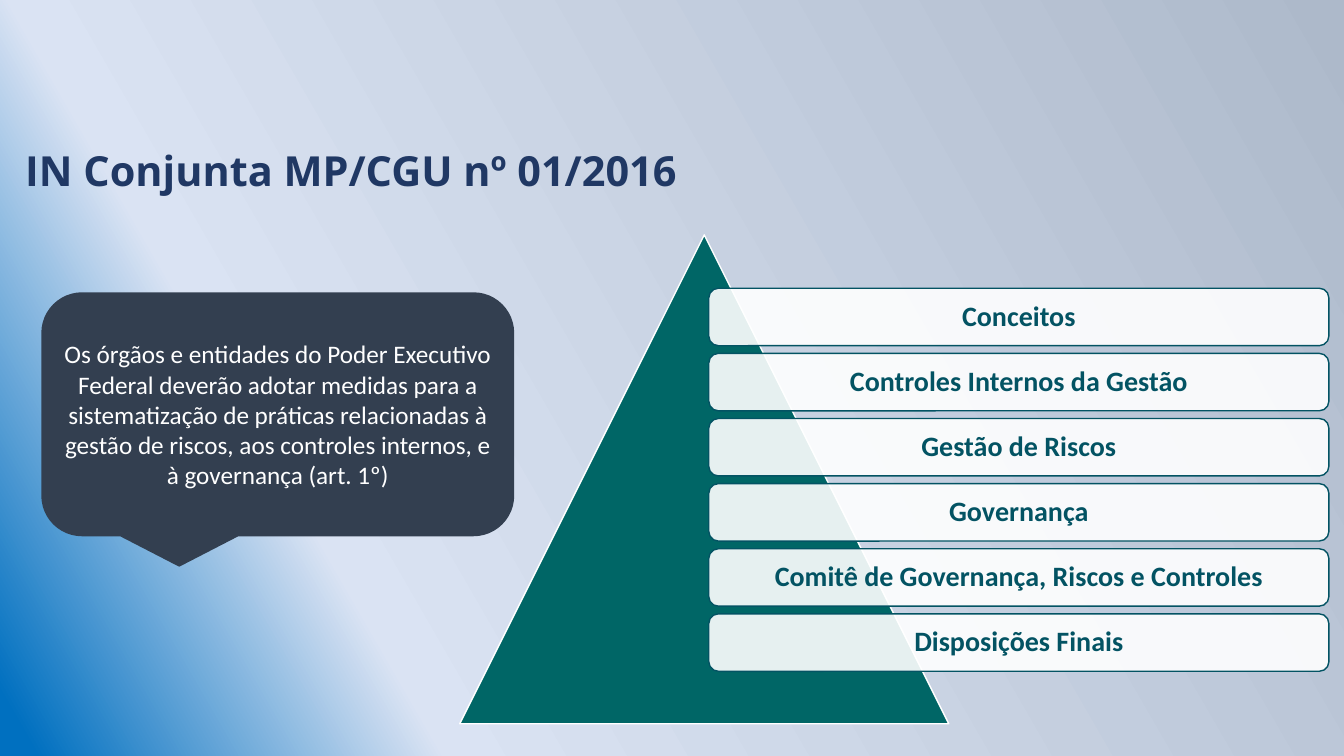
import copy

import pptx
import pptx.dml.color
import pptx.enum.shapes
import pptx.enum.text
import pptx.oxml
import pptx.oxml.ns
import pptx.util

Inches = pptx.util.Inches
Pt = pptx.util.Pt
RGBColor = pptx.dml.color.RGBColor
Shape = pptx.enum.shapes.MSO_SHAPE
Align = pptx.enum.text.PP_ALIGN
Anchor = pptx.enum.text.MSO_ANCHOR
qn = pptx.oxml.ns.qn

NAVY = RGBColor(0x20, 0x38, 0x64)
SLATE = RGBColor(0x33, 0x3F, 0x50)
GREEN = RGBColor(0x00, 0x66, 0x66)
TEAL = RGBColor(0x03, 0x53, 0x63)
WHITE = RGBColor(0xFF, 0xFF, 0xFF)
BACKGROUND_STOPS = [
    (0, RGBColor(0xAD, 0xB9, 0xCA)),
    (0.75, RGBColor(0xDA, 0xE3, 0xF3)),
    (0.98, RGBColor(0x00, 0x70, 0xC0)),
]

ARTICLE = (
    "Os órgãos e entidades do Poder Executivo Federal deverão adotar medidas "
    "para a sistematização de práticas relacionadas à gestão de riscos, aos "
    "controles internos, e à governança (art. 1º)"
)
CHAPTERS = [
    "Conceitos",
    "Controles Internos da Gestão",
    "Gestão de Riscos",
    "Governança",
    "Comitê de Governança, Riscos e Controles",
    "Disposições Finais",
]
FIRST_BAR_TOP = 2.86
LAST_BAR_TOP = 6.09


def paint_background(slide):
    fill = slide.background.fill
    fill.gradient()
    fill.gradient_angle = 210
    stop_list = slide.element.find(".//" + qn("a:gsLst"))
    stop_list.append(copy.deepcopy(stop_list[-1]))
    for stop, (position, color) in zip(fill.gradient_stops, BACKGROUND_STOPS):
        stop.position = position
        stop.color.rgb = color


def write_text(frame, text, font_name, size, color, align, bold=False):
    frame.word_wrap = True
    paragraph = frame.paragraphs[0]
    paragraph.text = text
    paragraph.alignment = align
    font = paragraph.font
    font.name = font_name
    font.size = Pt(size)
    font.bold = bold
    font.color.rgb = color
    return paragraph


def add_title(slide, text):
    title = slide.shapes.title
    title.left, title.top = Inches(0.15), Inches(1.44)
    title.width, title.height = Inches(6.75), Inches(0.74)
    frame = title.text_frame
    frame.vertical_anchor = Anchor.TOP
    frame.auto_size = pptx.enum.text.MSO_AUTO_SIZE.NONE
    paragraph = write_text(frame, text, "Open Sans", 29.6, NAVY, Align.LEFT, bold=True)
    paragraph.line_spacing = 0.9


def add_figure(slide, preset, left, top, width, height, fill_color, line_color=None):
    figure = slide.shapes.add_shape(
        preset, Inches(left), Inches(top), Inches(width), Inches(height)
    )
    figure.shadow.inherit = False
    figure.fill.solid()
    figure.fill.fore_color.rgb = fill_color
    if line_color is None:
        figure.line.fill.background()
    else:
        figure.line.color.rgb = line_color
        figure.line.width = Pt(1)
    figure.text_frame.vertical_anchor = Anchor.MIDDLE
    return figure


def set_opacity(figure, percent):
    color = figure.fill._xPr.find(qn("a:solidFill"))[0]
    alpha = pptx.oxml.parse_xml(
        f'<a:alpha {pptx.oxml.ns.nsdecls("a")} val="{percent * 1000}"/>'
    )
    color.append(alpha)


def add_chapter_bar(slide, top, chapter):
    bar = add_figure(
        slide, Shape.ROUNDED_RECTANGLE, 7.03, top, 6.15, 0.57, WHITE, TEAL
    )
    set_opacity(bar, 90)
    paragraph = write_text(
        bar.text_frame, chapter, "Calibri", 20, TEAL, Align.CENTER, bold=True
    )
    paragraph.line_spacing = 0.9


def main():
    deck = pptx.Presentation()
    deck.slide_width, deck.slide_height = Inches(13.33), Inches(7.5)
    slide = deck.slides.add_slide(deck.slide_layouts.get_by_name("Title Only"))

    paint_background(slide)
    add_title(slide, "IN Conjunta MP/CGU nº 01/2016")

    callout = add_figure(
        slide, Shape.ROUNDED_RECTANGULAR_CALLOUT, 0.41, 2.9, 4.69, 2.42, SLATE
    )
    write_text(callout.text_frame, ARTICLE, "Calibri", 18, WHITE, Align.CENTER)

    add_figure(slide, Shape.ISOSCELES_TRIANGLE, 4.56, 2.33, 4.85, 4.85, GREEN, WHITE)
    pitch = (LAST_BAR_TOP - FIRST_BAR_TOP) / (len(CHAPTERS) - 1)
    for index, chapter in enumerate(CHAPTERS):
        add_chapter_bar(slide, FIRST_BAR_TOP + index * pitch, chapter)

    deck.save("out.pptx")


if __name__ == "__main__":
    main()
